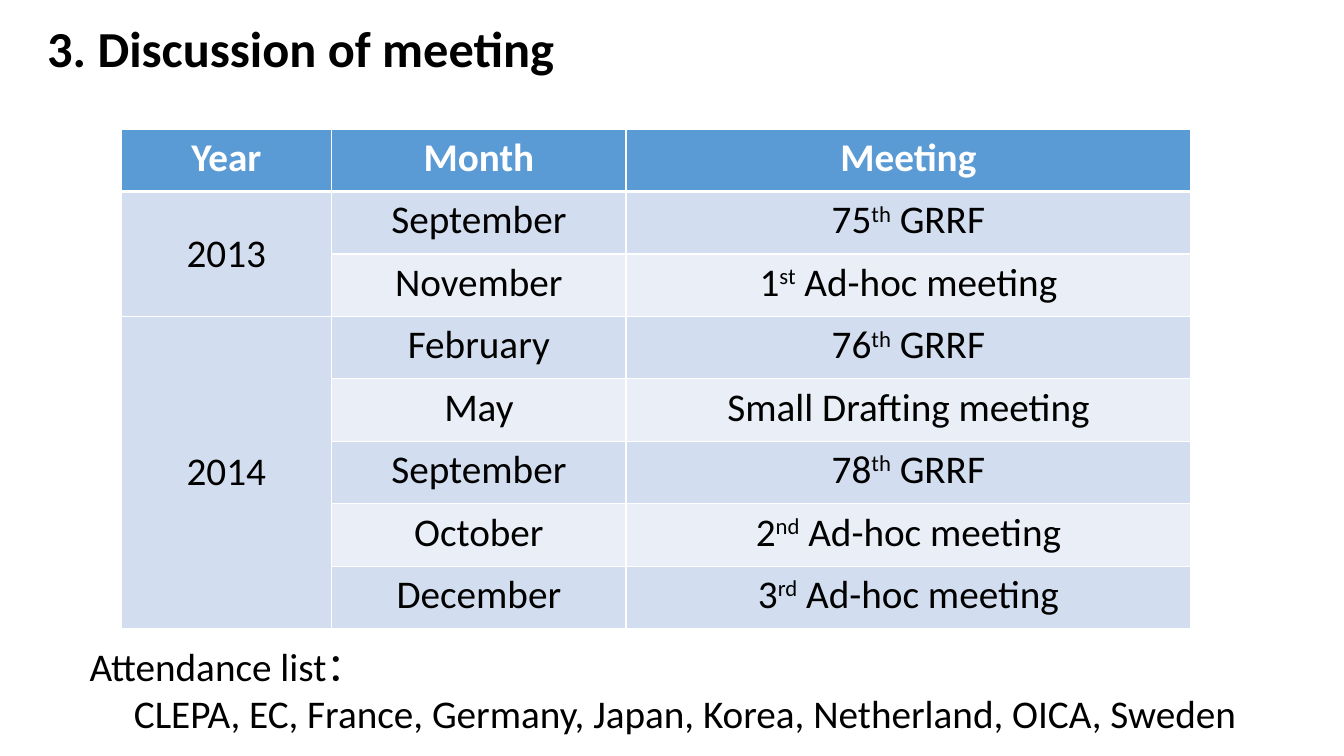
from lxml import etree
from pptx import Presentation
from pptx import util as u
from pptx.dml.color import RGBColor
from pptx.enum import text
from pptx.oxml.ns import qn

BLACK, WHITE = "000000", "FFFFFF"
HEADER, BAND_DARK, BAND_LIGHT = "5B9BD5", "D2DEEF", "EAEFF7"


def rgb(value):
    return RGBColor.from_string(value)


class SlideBuilder:
    font = "Calibri"

    def __init__(self, prs):
        self.s = prs.slides.add_slide(prs.slide_layouts[6])

    def style(self, p, size, color=BLACK, bold=False):
        f = p.font
        f.name, f.size, f.bold = self.font, u.Pt(size), bold
        f.color.rgb = rgb(color)

    def text_box(self, box, lines, size, bold=False, anchor=text.MSO_ANCHOR.TOP, spacing=1.0):
        """Add a text box; each line is (text, left indent in inches)."""
        tf = self.s.shapes.add_textbox(*map(u.Inches, box)).text_frame
        tf.word_wrap = True
        tf.vertical_anchor = anchor
        for i, (line, indent) in enumerate(lines):
            p = tf.add_paragraph() if i else tf.paragraphs[0]
            p.text = line
            p.line_spacing = spacing
            self.style(p, size, bold=bold)
            if indent:
                p._p.get_or_add_pPr().set("marL", str(u.Inches(indent)))

    def borders(self, cell, top, bottom):
        """Draw white cell borders, widths in points."""
        tc_pr = cell._tc.get_or_add_tcPr()
        for side, width in (("L", 1), ("R", 1), ("T", top), ("B", bottom)):
            ln = etree.SubElement(tc_pr, qn(f"a:ln{side}"), w=str(u.Pt(width)))
            fill = etree.SubElement(ln, qn("a:solidFill"))
            etree.SubElement(fill, qn("a:srgbClr"), val=WHITE)

    def cell(self, cell, parts, fill, size, color=BLACK, bold=False):
        """Fill a cell; every second part of its text is superscript."""
        cell.fill.solid()
        cell.fill.fore_color.rgb = rgb(fill)
        p = cell.text_frame.paragraphs[0]
        p.alignment = text.PP_ALIGN.CENTER
        self.style(p, size, color, bold)
        for i, part in enumerate(parts):
            r = p.add_run()
            r.text = part
            if i % 2:
                r._r.get_or_add_rPr().set("baseline", "30000")

    def table(self, left, top, widths, row_height, header, years, size):
        """Add a banded table with one merged first-column cell per year."""
        count = 1 + sum(len(meetings) for _, meetings in years)
        table = self.s.shapes.add_table(
            count, len(widths), u.Inches(left), u.Inches(top),
            u.Inches(sum(widths)), u.Inches(row_height * count)).table
        for column, width in zip(table.columns, widths):
            column.width = u.Inches(width)
        for i, row in enumerate(table.rows):
            row.height = u.Inches(row_height)
            for cell in row.cells:
                self.borders(cell, 3 if i == 1 else 1, 3 if i == 0 else 1)
        for j, title in enumerate(header):
            self.cell(table.cell(0, j), [title], HEADER, size, WHITE, True)
        i = 1
        for year, meetings in years:
            year_cell = table.cell(i, 0)
            year_cell.merge(table.cell(i + len(meetings) - 1, 0))
            year_cell.vertical_anchor = text.MSO_ANCHOR.MIDDLE
            self.cell(year_cell, [year], BAND_DARK, size)
            for month, *meeting in meetings:
                band = BAND_DARK if i % 2 else BAND_LIGHT
                self.cell(table.cell(i, 1), [month], band, size)
                self.cell(table.cell(i, 2), meeting, band, size)
                i += 1


def main():
    prs = Presentation()
    prs.slide_width, prs.slide_height = u.Inches(13.33), u.Inches(7.5)
    slide = SlideBuilder(prs)
    slide.text_box((0.37, 0.04, 11.5, 0.93), [("3. Discussion of meeting", 0)], 36,
                   bold=True, anchor=text.MSO_ANCHOR.MIDDLE, spacing=0.9)
    slide.text_box((0.79, 6.32, 11.84, 1.04), [
        ("Attendance list：", 0),
        ("CLEPA, EC, France, Germany, Japan, Korea, Netherland, OICA, Sweden", 0.44),
    ], 28)
    years = [
        ("2013", [
            ("September", "75", "th", " GRRF"),
            ("November", "1", "st", " Ad-hoc meeting"),
        ]),
        ("2014", [
            ("February", "76", "th", " GRRF"),
            ("May", "Small Drafting meeting"),
            ("September", "78", "th", " GRRF"),
            ("October", "2", "nd", " Ad-hoc meeting"),
            ("December", "3", "rd", " Ad-hoc meeting"),
        ]),
    ]
    slide.table(1.2, 1.28, (2.09, 2.92, 5.6), 0.62, ("Year", "Month", "Meeting"), years, 28)
    prs.save("out.pptx")


if __name__ == "__main__":
    main()
